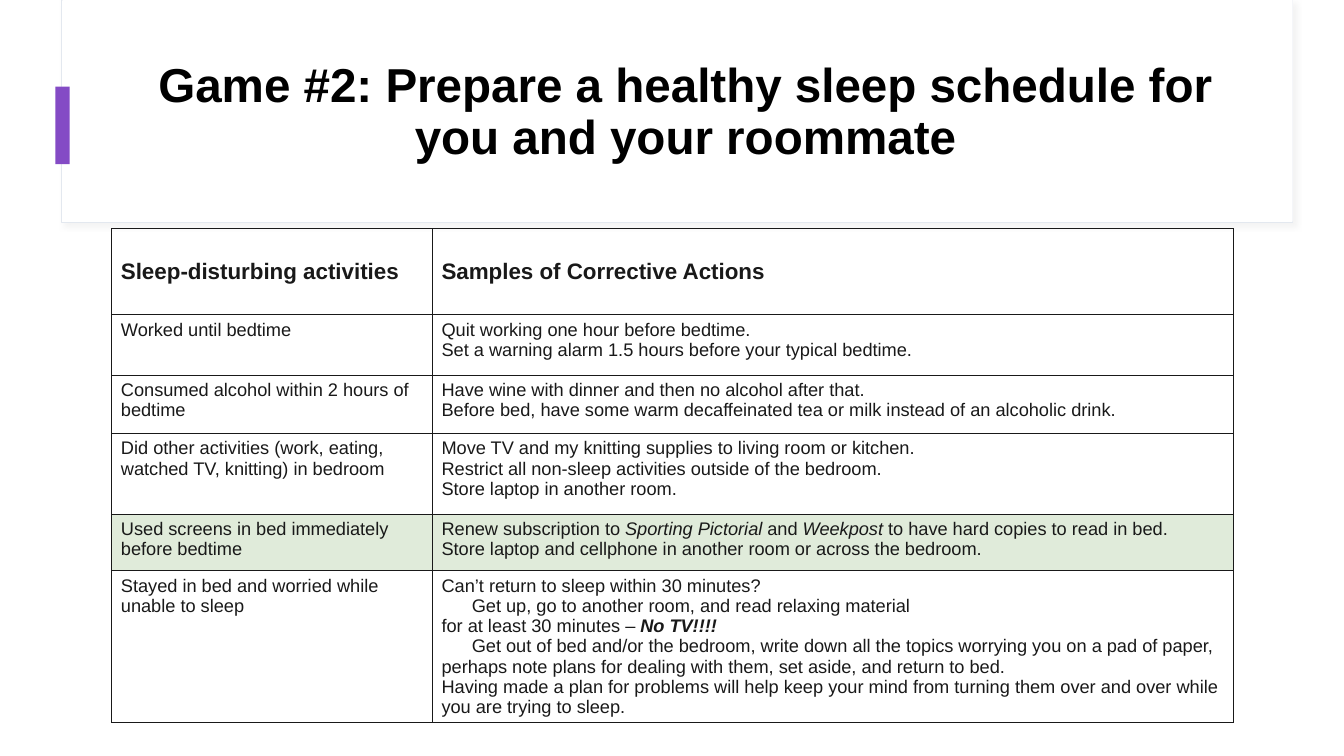
"""Build the healthy sleep schedule slide with its activity table."""
import pptx
import pptx.dml.color
import pptx.enum.shapes
import pptx.enum.text
import pptx.oxml
import pptx.util
from pptx.util import Inches

COLOURS = {
    "ink": "191919",
    "title": "000000",
    "panel": "FFFFFF",
    "edge": "E3E8EF",
    "shadow": "D9D9D9",
    "accent": "844BC5",
    "highlight": "E0EBDA",
}
DRAWING = 'xmlns:a="http://schemas.openxmlformats.org/drawingml/2006/main"'
INDENT = "indent"
HIGHLIGHTED_ROW = 4
COLUMN_WIDTHS = [3.18, 7.94]
ROW_HEIGHTS = [0.85, 0.6, 0.58, 0.8, 0.56, 1.37]

ROWS = [
    (["Sleep-disturbing activities"], ["Samples of Corrective Actions"]),
    (
        ["Worked until bedtime"],
        [
            "Quit working one hour before bedtime.",
            "Set a warning alarm 1.5 hours before your typical bedtime.",
        ],
    ),
    (
        ["Consumed alcohol within 2 hours of bedtime"],
        [
            "Have wine with dinner and then no alcohol after that.",
            "Before bed, have some warm decaffeinated tea or milk instead of an alcoholic drink.",
        ],
    ),
    (
        ["Did other activities (work, eating,", "watched TV, knitting) in bedroom"],
        [
            "Move TV and my knitting supplies to living room or kitchen.",
            "Restrict all non-sleep activities outside of the bedroom.",
            "Store laptop in another room.",
        ],
    ),
    (
        ["Used screens in bed immediately", "before bedtime"],
        [
            [
                ("Renew subscription to ", ""),
                ("Sporting Pictorial", "i"),
                (" and ", ""),
                ("Weekpost ", "i"),
                ("to have hard copies to read in bed.", ""),
            ],
            "Store laptop and cellphone in another room or across the bedroom.",
        ],
    ),
    (
        ["Stayed in bed and worried while", "unable to sleep"],
        [
            "Can’t return to sleep within 30 minutes?",
            [("Get up, go to another room, and read relaxing material", INDENT)],
            [("for at least 30 minutes – ", ""), ("No TV!!!!", "bi")],
            [("Get out of bed and/or the bedroom, write down all the topics "
              "worrying you on a pad of paper,", INDENT)],
            "perhaps note plans for dealing with them, set aside, and return to bed.",
            "Having made a plan for problems will help keep your mind from turning "
            "them over and over while you are trying to sleep.",
        ],
    ),
]


def colour(name):
    """Return the named colour as an RGB value."""
    return pptx.dml.color.RGBColor.from_string(COLOURS[name])


class SlideBuilder:
    """Hold the text style and the current slide."""

    def __init__(self, page, font="Arial"):
        """Remember the slide and the font."""
        self.page = page
        self.font = font

    def add_span(self, para, text, size, ink="ink", bold=False, italic=False):
        """Add one formatted run to a paragraph."""
        span = para.add_run()
        span.text = text
        span.font.name = self.font
        span.font.size = pptx.util.Pt(size)
        span.font.bold = bold
        span.font.italic = italic
        span.font.color.rgb = colour(ink)

    def add_box(self, left, top, width, height, fill, line=None, shadow=None):
        """Add a filled rectangle with an optional outline and soft shadow."""
        box = self.page.shapes.add_shape(
            pptx.enum.shapes.MSO_SHAPE.RECTANGLE,
            Inches(left), Inches(top), Inches(width), Inches(height))
        box.fill.solid()
        box.fill.fore_color.rgb = colour(fill)
        if line:
            box.line.color.rgb = colour(line)
            box.line.width = pptx.util.Pt(0.75)
        else:
            box.line.fill.background()
        box.shadow.inherit = False
        if shadow:
            effects = box._element.spPr.find(pptx.oxml.ns.qn("a:effectLst"))
            effects.append(pptx.oxml.parse_xml(
                f'<a:outerShdw {DRAWING} blurRad="{pptx.util.Pt(4)}" '
                f'dist="{pptx.util.Pt(3)}" dir="2700000" algn="tl" rotWithShape="0">'
                f'<a:srgbClr val="{COLOURS[shadow]}"><a:alpha val="30000"/></a:srgbClr>'
                '</a:outerShdw>'))

    def set_title(self, text, left, top, width, height):
        """Place and format the title above the panel."""
        title = self.page.shapes.title
        title.left, title.top = Inches(left), Inches(top)
        title.width, title.height = Inches(width), Inches(height)
        self.page.shapes._spTree.append(title._element)
        frame = title.text_frame
        frame.word_wrap = True
        frame.auto_size = pptx.enum.text.MSO_AUTO_SIZE.NONE
        frame.vertical_anchor = pptx.enum.text.MSO_ANCHOR.BOTTOM
        para = frame.paragraphs[0]
        para.alignment = pptx.enum.text.PP_ALIGN.CENTER
        para.line_spacing = 0.9
        self.add_span(para, text, 34, "title", bold=True)

    def fill_cell(self, cell, lines, header, highlighted):
        """Write the lines of a cell and set its borders and fill."""
        anchor = pptx.enum.text.MSO_ANCHOR
        cell.vertical_anchor = anchor.MIDDLE if header else anchor.TOP
        cell.margin_left = cell.margin_right = Inches(0.09)
        cell.margin_top = cell.margin_bottom = Inches(0.05)
        properties = cell._tc.get_or_add_tcPr()
        for side in ("lnL", "lnR", "lnT", "lnB"):
            properties.append(pptx.oxml.parse_xml(
                f'<a:{side} {DRAWING} w="{pptx.util.Pt(0.75)}"><a:solidFill>'
                f'<a:srgbClr val="{COLOURS["ink"]}"/></a:solidFill></a:{side}>'))
        if highlighted:
            cell.fill.solid()
            cell.fill.fore_color.rgb = colour("highlight")
        else:
            cell.fill.background()
        for index, line in enumerate(lines):
            frame = cell.text_frame
            para = frame.add_paragraph() if index else frame.paragraphs[0]
            spans = [(line, "")] if isinstance(line, str) else line
            for text, style in spans:
                if style == INDENT:
                    para._p.get_or_add_pPr().set("indent", str(Inches(0.3)))
                self.add_span(para, text, 16 if header else 13,
                              bold=header or style == "bi",
                              italic=style in ("i", "bi"))

    def add_table(self, left, top, widths, heights, rows):
        """Add the bordered table."""
        table = self.page.shapes.add_table(
            len(heights), len(widths), Inches(left), Inches(top),
            Inches(sum(widths)), Inches(sum(heights))).table
        table.first_row = table.horz_banding = False
        for column, width in zip(table.columns, widths):
            column.width = Inches(width)
        for index, (row, height) in enumerate(zip(table.rows, heights)):
            row.height = Inches(height)
            for cell, lines in zip(row.cells, rows[index]):
                self.fill_cell(cell, lines, index == 0, index == HIGHLIGHTED_ROW)


def main():
    """Build and save the deck."""
    deck = pptx.Presentation()
    deck.slide_width, deck.slide_height = Inches(13.33), Inches(7.5)
    builder = SlideBuilder(deck.slides.add_slide(deck.slide_layouts[5]))
    builder.add_box(0.61, 0, 12.21, 2.21, "panel", line="edge", shadow="shadow")
    builder.add_box(0.62, 0, 12.2, 2.2, "panel")
    builder.add_box(0.55, 0.86, 0.14, 0.77, "accent")
    builder.add_table(1.11, 2.27, COLUMN_WIDTHS, ROW_HEIGHTS, ROWS)
    builder.set_title(
        "Game #2: Prepare a healthy sleep schedule for you and your roommate",
        1.24, 0.44, 11.12, 1.24)
    deck.save("out.pptx")


if __name__ == "__main__":
    main()
